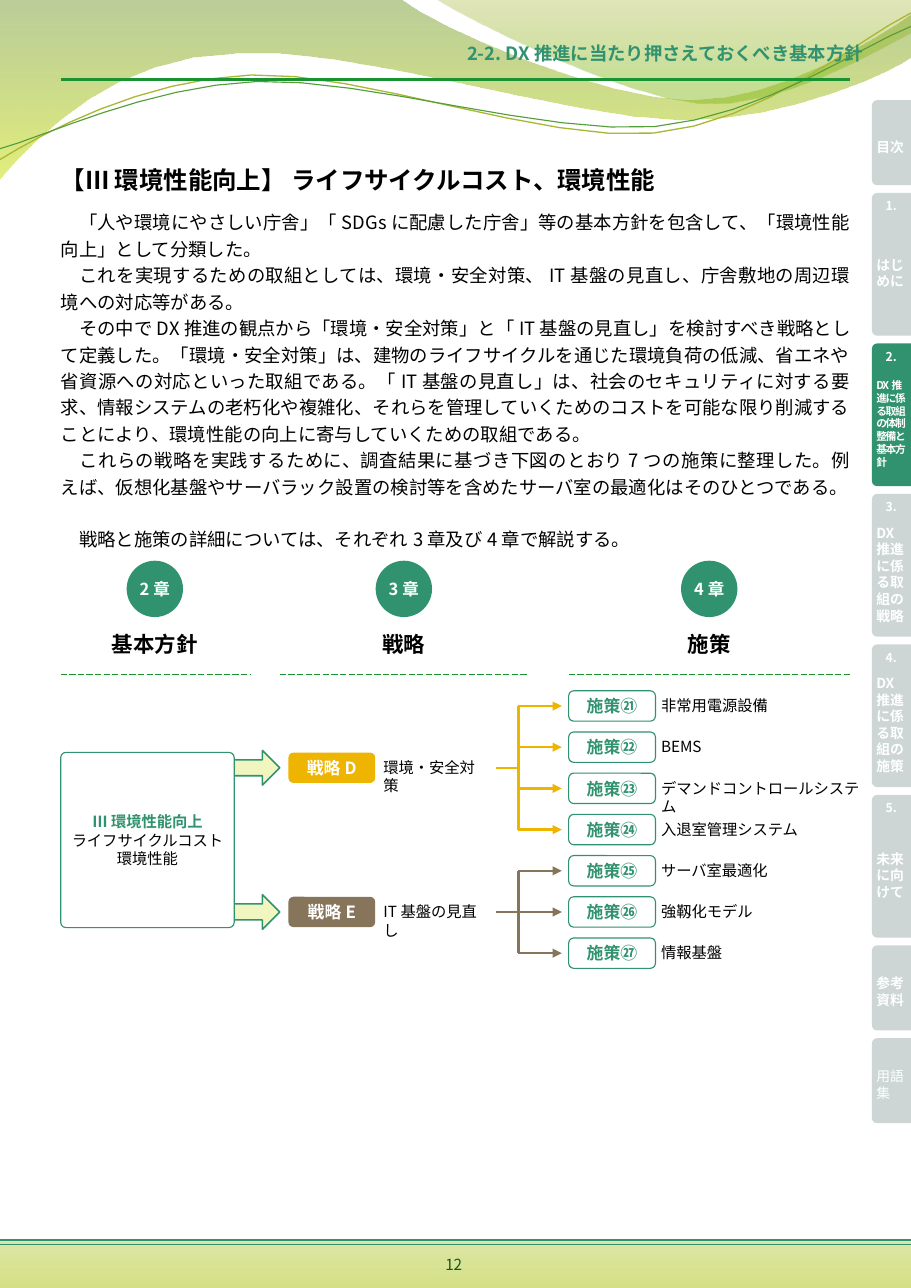
"""Build the page on environmental performance strategies and measures."""
import dataclasses
import typing

import lxml.etree
import pptx
import pptx.dml.color
import pptx.enum.dml
import pptx.enum.shapes
import pptx.enum.text
import pptx.oxml.ns
import pptx.util

Cm, Pt = pptx.util.Cm, pptx.util.Pt
qn = pptx.oxml.ns.qn
Kind = pptx.enum.shapes.MSO_SHAPE
Align = pptx.enum.text.PP_ALIGN
Anchor = pptx.enum.text.MSO_ANCHOR
Point = tuple[float, float]


@dataclasses.dataclass(frozen=True)
class Theme:
    font: str = "Noto Sans CJK JP"
    green: str = "31926F"
    rule: str = "199332"
    white: str = "FFFFFF"
    black: str = "000000"
    grey: str = "CDD6D5"
    gold: str = "EEB500"
    brown: str = "87755B"
    cream: str = "F1F6C0"
    folio: str = "0F591F"
    olive: str = "A9B733"
    leaf: str = "549E39"
    title: float = 16
    head: float = 14
    body: float = 12
    pill: float = 11
    disc: float = 10.8
    label: float = 10
    tab: float = 9
    count: float = 8
    small: float = 7


T = Theme()


@dataclasses.dataclass(frozen=True)
class Run:
    text: str
    size: float
    color: str = T.black
    bold: bool = False
    space: float = 0


@dataclasses.dataclass(frozen=True)
class Box:
    left: float
    top: float
    width: float
    height: float

    def emu(self) -> list[int]:
        return [Cm(v) for v in dataclasses.astuple(self)]


@dataclasses.dataclass(frozen=True)
class Stop:
    place: float
    color: str
    alpha: int = 100


@dataclasses.dataclass(frozen=True)
class Tab:
    text: str
    count: str = ""
    size: float = T.tab
    bold: bool = True
    space: float = 0
    color: str = T.grey


@dataclasses.dataclass(frozen=True)
class Column:
    disc: str
    name: str
    mid: float
    left: float
    right: float


@dataclasses.dataclass(frozen=True)
class Plan:
    name: str
    label: str
    color: str
    first: int
    last: int


deck = pptx.Presentation()
deck.slide_width, deck.slide_height = Cm(21), Cm(29.7)
page = deck.slides.add_slide(deck.slide_layouts[6]).shapes


def rgb(code: str) -> pptx.dml.color.RGBColor:
    return pptx.dml.color.RGBColor.from_string(code)


def write(shape: typing.Any, lines: list[Run], align: Align = Align.LEFT,
          anchor: Anchor = Anchor.MIDDLE, wrap: bool = True, pitch: float = 1.0) -> None:
    frame = shape.text_frame
    frame.word_wrap, frame.vertical_anchor = wrap, anchor
    frame.margin_left = frame.margin_right = frame.margin_top = frame.margin_bottom = 0
    for i, line in enumerate(lines):
        para = frame.add_paragraph() if i else frame.paragraphs[0]
        para.alignment, para.line_spacing = align, pitch
        run = para.add_run()
        run.text = line.text
        font = run.font
        font.name, font.size, font.bold = T.font, Pt(line.size), line.bold
        font.color.rgb = rgb(line.color)
        props = font._element
        if line.space:
            props.set("spc", str(round(line.space * 100)))
        lxml.etree.SubElement(props, qn("a:ea")).set("typeface", T.font)


def label(box: Box, lines: list[Run], align: Align = Align.LEFT,
          anchor: Anchor = Anchor.TOP, wrap: bool = True, pitch: float = 1.0) -> typing.Any:
    shape = page.add_textbox(*box.emu())
    write(shape, lines, align, anchor, wrap, pitch)
    return shape


def paint(shape: typing.Any, fill: str | list[Stop] | None, line: str = "", width: float = 0.75) -> None:
    shape.shadow.inherit = False
    if isinstance(fill, list):
        shape.fill.gradient()
        shape.fill.gradient_angle = 270
        for stop, want in zip(shape.fill.gradient_stops, fill):
            stop.position, stop.color.rgb = want.place, rgb(want.color)
        for tint, want in zip(shape.element.spPr.iter(qn("a:srgbClr")), fill):
            lxml.etree.SubElement(tint, qn("a:alpha")).set("val", str(want.alpha * 1000))
    elif fill:
        shape.fill.solid()
        shape.fill.fore_color.rgb = rgb(fill)
    else:
        shape.fill.background()
    if line:
        shape.line.color.rgb, shape.line.width = rgb(line), Pt(width)
    else:
        shape.line.fill.background()


def block(kind: Kind, box: Box, fill: str | list[Stop], line: str = "", width: float = 0.75,
          lines: list[Run] | None = None) -> typing.Any:
    shape = page.add_shape(kind, *box.emu())
    paint(shape, fill, line, width)
    if lines:
        write(shape, lines, Align.CENTER)
    return shape


def curve(start: Point, parts: list[list[Point]], fill: list[Stop] | None,
          line: str = "", width: float = 0.75, steps: int = 8) -> None:
    dots, last = [], start
    for part in parts:
        if len(part) == 1:
            dots.append(part[0])
        else:
            for n in range(1, steps + 1):
                t = n / steps
                mix = ((1 - t) ** 3, 3 * t * (1 - t) ** 2, 3 * t * t * (1 - t), t ** 3)
                dots.append(tuple(sum(m * p[k] for m, p in zip(mix, [last, *part])) for k in (0, 1)))
        last = part[-1]
    form = page.build_freeform(Cm(start[0]), Cm(start[1]))
    form.add_line_segments([(Cm(x), Cm(y)) for x, y in dots], close=fill is not None)
    paint(form.convert_to_shape(), fill, line, width)


def rule(start: Point, end: Point, color: str, width: float = 1.5, dash: bool = False, arrow: bool = False) -> None:
    link = page.add_connector(pptx.enum.shapes.MSO_CONNECTOR.STRAIGHT, *(Cm(v) for v in (*start, *end)))
    link.line.color.rgb, link.line.width = rgb(color), Pt(width)
    if dash:
        link.line.dash_style = pptx.enum.dml.MSO_LINE.LONG_DASH
    props = link.element.spPr
    if arrow:
        lxml.etree.SubElement(props.find(qn("a:ln")), qn("a:tailEnd")).set("type", "triangle")
    lxml.etree.SubElement(props, qn("a:effectLst"))


def frame() -> None:
    curve((0, 0), [[(9.25, 0)], [(9.98, 0.61), (13.94, 2.31), (15.93, 2.31)],
                   [(17.91, 2.31), (20.12, 0.94), (21, 0.33)], [(21, 1.32)],
                   [(20.65, 1.6), (18.26, 2.77), (15.67, 2.77)], [(13.06, 2.74), (8, 1.02), (5.41, 1.24)],
                   [(2.72, 1.3), (0.97, 3.02), (0, 4.14)]], [Stop(0, "69921C", 45), Stop(1, "CCE10F", 55)])
    curve((10.06, 0), [[(10.69, 0.41), (14.33, 2.26), (16.15, 2.39)], [(17.96, 2.51), (20.19, 1.17), (21, 0.76)],
                       [(21, 0)]], [Stop(0, "9BAA1A", 30), Stop(0.8, "81BA16", 45)])
    curve((0, 3.68), [[(0.99, 3.07), (3.28, 1.83), (5.79, 1.73)], [(8.31, 1.63), (12.52, 3.3), (15.06, 3.07)],
                      [(17.6, 2.84), (19.79, 0.89), (21, 0.3)]], None, T.olive, 0.85)
    curve((0, 3.43), [[(0.97, 3.18), (3.4, 1.98), (5.92, 1.88)], [(8.46, 1.8), (12.57, 3.12), (15.09, 2.92)],
                      [(17.6, 2.67), (19.79, 1.09), (21, 0.61)]], None, T.leaf)
    block(Kind.RECTANGLE, Box(0, 28.6, 21, 1.1), [Stop(0, "DDE6A6"), Stop(1, "D4E084")])
    rule((0, 28.6), (21, 28.6), T.green)
    rule((0, 28.7), (21, 28.7), T.green, 1)
    rule((1.4, 1.83), (19.6, 1.83), T.rule)
    label(Box(8.1, 28.93, 4.72, 0.43), [Run("12", T.label, T.folio)], Align.CENTER, Anchor.MIDDLE)


def index(tabs: list[Tab]) -> None:
    left, wide, top = 20.1, 0.9, 2.31
    for tab in tabs:
        tall = 3.29 if tab.count else 1.96
        back = block(Kind.ROUND_2_SAME_RECTANGLE,
                     Box(left + (wide - tall) / 2, top + (tall - wide) / 2, tall, wide), tab.color)
        back.rotation, back.adjustments[0] = 270, 0.13
        inset = 0.53 if tab.count else 0.3
        label(Box(20.2, top + inset, 0.71, tall - inset - 0.12),
              [Run(tab.text, tab.size, T.white, tab.bold, tab.space)], anchor=Anchor.MIDDLE)
        if tab.count:
            label(Box(20.24, top + 0.13, 0.61, 0.33), [Run(tab.count, T.count, T.white, True)],
                  Align.CENTER, Anchor.MIDDLE)
        top += tall + 0.18


def prose() -> None:
    label(Box(10.5, 1.02, 9.4, 0.91), [Run("2-2. DX推進に当たり押さえておくべき基本方針", T.body, T.green, True)],
          Align.RIGHT, pitch=0.9)
    label(Box(1.4, 3.81, 18.2, 0.69), [Run("【Ⅲ 環境性能向上】 ライフサイクルコスト、環境性能", T.title, bold=True)])
    texts = [
        "　「人や環境にやさしい庁舎」「SDGsに配慮した庁舎」等の基本方針を包含して、「環境性能向上」として分類した。",
        "　これを実現するための取組としては、環境・安全対策、IT基盤の見直し、庁舎敷地の周辺環境への対応等がある。",
        "　その中でDX推進の観点から「環境・安全対策」と「IT基盤の見直し」を検討すべき戦略として定義した。"
        "「環境・安全対策」は、建物のライフサイクルを通じた環境負荷の低減、省エネや省資源への対応といった取組である。"
        "「IT基盤の見直し」は、社会のセキュリティに対する要求、情報システムの老朽化や複雑化、それらを管理していくための"
        "コストを可能な限り削減することにより、環境性能の向上に寄与していくための取組である。",
        "　これらの戦略を実践するために、調査結果に基づき下図のとおり7つの施策に整理した。"
        "例えば、仮想化基盤やサーバラック設置の検討等を含めたサーバ室の最適化はそのひとつである。",
        "　戦略と施策の詳細については、それぞれ3章及び4章で解説する。"]
    body = label(Box(1.4, 4.78, 18.2, 8), [Run(t, T.body) for t in texts], Align.JUSTIFY, pitch=1.2)
    body.text_frame.paragraphs[-1].space_before = Pt(17)


def chart(columns: list[Column], tasks: dict[str, str], plans: list[Plan]) -> None:
    for col in columns:
        block(Kind.OVAL, Box(col.mid - 0.65, 12.93, 1.3, 1.3), T.green, lines=[Run(col.disc, T.disc, T.white, True)])
        wide = 0.5 * len(col.name)
        label(Box(col.mid - wide / 2, 14.55, wide, 0.61), [Run(col.name, T.head, bold=True)], Align.CENTER, wrap=False)
        rule((col.left, 15.55), (col.right, 15.55), T.rule, 0.5, dash=True)
    rows = [16.28 + 0.95 * i for i in range(len(tasks))]
    for y, (name, text) in zip(rows, tasks.items()):
        label(Box(15.24, y - 0.22, 4.72, 0.43), [Run(text, T.label)])
        block(Kind.ROUNDED_RECTANGLE, Box(13.11, y - 0.35, 2, 0.7), T.white, T.green,
              lines=[Run(name, T.pill, T.green, True)])
    for plan in plans:
        span = rows[plan.first:plan.last + 1]
        mid = (span[0] + span[-1]) / 2
        rule((11.95, span[0]), (11.95, span[-1]), plan.color)
        rule((11.43, mid), (11.95, mid), plan.color)
        for y in span:
            rule((11.95, y), (12.95, y), plan.color, arrow=True)
        arrow = block(Kind.RIGHT_ARROW, Box(5.36, mid - 0.4, 1.09, 0.8), T.cream, T.green, 1)
        arrow.adjustments[0] = 0.46
        label(Box(8.84, mid - 0.22, 2.4, 0.43), [Run(plan.label, T.label)])
        block(Kind.ROUNDED_RECTANGLE, Box(6.65, mid - 0.35, 2, 0.7), plan.color,
              lines=[Run(plan.name, T.pill, T.white, True)])
    goal = block(Kind.ROUNDED_RECTANGLE, Box(1.4, 17.35, 4, 4.04), T.white, T.green,
                 lines=[Run("Ⅲ 環境性能向上", T.label, T.green, True),
                        Run("ライフサイクルコスト", T.label), Run("環境性能", T.label)])
    goal.adjustments[0] = 0.03


def main() -> None:
    frame()
    index([Tab("目次"), Tab("はじめに", "1."),
           Tab("DX推進に係る取組の体制整備と基本方針", "2.", T.small, space=-0.8, color=T.green),
           Tab("DX推進に係る取組の戦略", "3."), Tab("DX推進に係る取組の施策", "4."),
           Tab("未来に向けて", "5."), Tab("参考資料"), Tab("用語集", bold=False)])
    prose()
    chart([Column("2章", "基本方針", 3.57, 1.4, 5.77), Column("3章", "戦略", 9.31, 6.45, 12.19),
           Column("4章", "施策", 16.35, 13.11, 19.6)],
          {"施策㉑": "非常用電源設備", "施策㉒": "BEMS", "施策㉓": "デマンドコントロールシステム",
           "施策㉔": "入退室管理システム", "施策㉕": "サーバ室最適化", "施策㉖": "強靱化モデル", "施策㉗": "情報基盤"},
          [Plan("戦略D", "環境・安全対策", T.gold, 0, 3), Plan("戦略E", "IT基盤の見直し", T.brown, 4, 6)])
    deck.save("out.pptx")


if __name__ == "__main__":
    main()
